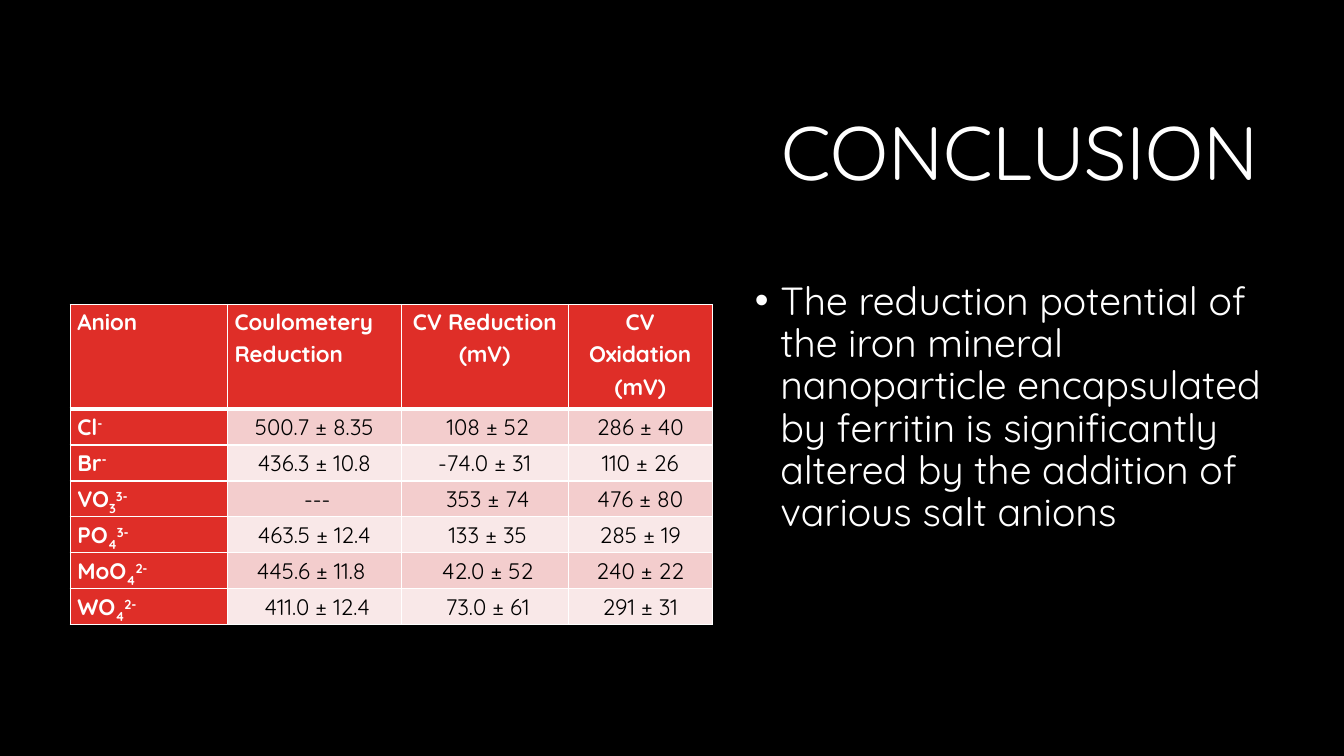
"""Build the conclusion slide with its table of anion potentials."""
import pptx
import pptx.dml.color
import pptx.enum.text
import pptx.oxml
import pptx.oxml.ns
import pptx.util

Cm, Pt = pptx.util.Cm, pptx.util.Pt
ALIGN = pptx.enum.text.PP_ALIGN
ANCHOR = pptx.enum.text.MSO_ANCHOR
HUES = {"back": "000000", "light": "FFFFFF", "dark": "000000",
        "red": "DF2E28", "odd": "F3CDCD", "even": "F9E8E8"}


def hue(name):
    """Give the named colour."""
    return pptx.dml.color.RGBColor.from_string(HUES[name])


def write(para, parts, size, tint, bold, **form):
    """Add (text, baseline) parts to a paragraph and format them."""
    for key, val in form.items():
        setattr(para, key, val)
    for text, base in parts:
        run = para.add_run()
        run.text = text
        look = {"name": "Quicksand", "size": Pt(size), "bold": bold}
        for key, val in look.items():
            setattr(run.font, key, val)
        run.font.color.rgb = hue(tint)
        if base:
            run.font._element.set("baseline", str(base * 1000))


deck = pptx.Presentation()
deck.slide_width, deck.slide_height = Cm(33.87), Cm(19.05)
slide = deck.slides.add_slide(deck.slide_layouts[1])
slide.background.fill.solid()
slide.background.fill.fore_color.rgb = hue("back")

title, body = slide.shapes.title, slide.placeholders[1]
spots = [(title, (8.05, 2.13, 23.93, 3.58), ANCHOR.MIDDLE),
         (body, (18.77, 6.96, 13.64, 8.69), ANCHOR.TOP)]
for shape, spot, anchor in spots:
    for key, val in zip(("left", "top", "width", "height"), spot):
        setattr(shape, key, Cm(val))
    form = {"word_wrap": True, "vertical_anchor": anchor,
            "auto_size": pptx.enum.text.MSO_AUTO_SIZE.NONE}
    for key, val in form.items():
        setattr(shape.text_frame, key, val)

write(title.text_frame.paragraphs[0], [("CONCLUSION", 0)], 54, "light", False,
      alignment=ALIGN.RIGHT, line_spacing=0.9)
point = body.text_frame.paragraphs[0]
props = point._p.get_or_add_pPr()
props.set("marL", str(Cm(0.64)))
props.set("indent", str(-Cm(0.64)))
write(point, [("The reduction potential of the iron mineral nanoparticle "
               "encapsulated by ferritin is significantly altered by the "
               "addition of various salt anions", 0)], 28, "light", False,
      alignment=ALIGN.LEFT, line_spacing=0.9, space_before=Pt(0))

heads = ["Anion", "Coulometery Reduction", "CV Reduction (mV)", "CV Oxidation (mV)"]
ions = [("Cl", "", "-"), ("Br", "", "-"), ("VO", "3", "3-"),
        ("PO", "4", "3-"), ("MoO", "4", "2-"), ("WO", "4", "2-")]
data = [["500.7 ± 8.35", " 108 ± 52", "286 ± 40"],
        ["436.3 ± 10.8", "-74.0 ± 31", "110 ± 26"],
        [" ---", " 353 ± 74", "476 ± 80"],
        ["463.5 ± 12.4", " 133 ± 35", "285 ± 19"],
        ["445.6 ± 11.8 ", " 42.0 ± 52", "240 ± 22"],
        [" 411.0 ± 12.4", " 73.0 ± 61", "291 ± 31"]]
rows = [[[(head, 0)] for head in heads]]
for (stem, sub, sup), vals in zip(ions, data):
    name = [(text, base) for text, base in ((stem, 0), (sub, -25), (sup, 30)) if text]
    rows.append([name] + [[(val, 0)] for val in vals])

wide, high = [3.96, 4.38, 4.21, 3.63], [2.64] + [0.905] * len(data)
grid = slide.shapes.add_table(len(rows), len(wide), Cm(1.77), Cm(7.67),
                              Cm(sum(wide)), Cm(sum(high))).table
for col, size in zip(grid.columns, wide):
    col.width = Cm(size)
for row, size in zip(grid.rows, high):
    row.height = Cm(size)

for r, row in enumerate(rows):
    for c, parts in enumerate(row):
        cell = grid.cell(r, c)
        edges = {"margin_left": Cm(0.18), "margin_right": Cm(0.18),
                 "margin_top": 0, "margin_bottom": 0}
        for key, val in edges.items():
            setattr(cell, key, val)
        tcpr = cell._tc.get_or_add_tcPr()
        thick = {"L": 1, "R": 1, "T": 3 if r == 1 else 1, "B": 3 if r == 0 else 1}
        for side, size in thick.items():
            tcpr.append(pptx.oxml.parse_xml(
                f'<a:ln{side} {pptx.oxml.ns.nsdecls("a")} w="{Pt(size)}"><a:solidFill>'
                f'<a:srgbClr val="{HUES["light"]}"/></a:solidFill></a:ln{side}>'))
        label = r == 0 or c == 0
        cell.fill.solid()
        cell.fill.fore_color.rgb = hue("red" if label else "odd" if r % 2 else "even")
        plain = c == 0 or (r == 0 and c == 1)
        write(cell.text_frame.paragraphs[0], parts, 16,
              "light" if label else "dark", label, line_spacing=1.15,
              alignment=ALIGN.JUSTIFY if plain else ALIGN.CENTER)

deck.save("out.pptx")
